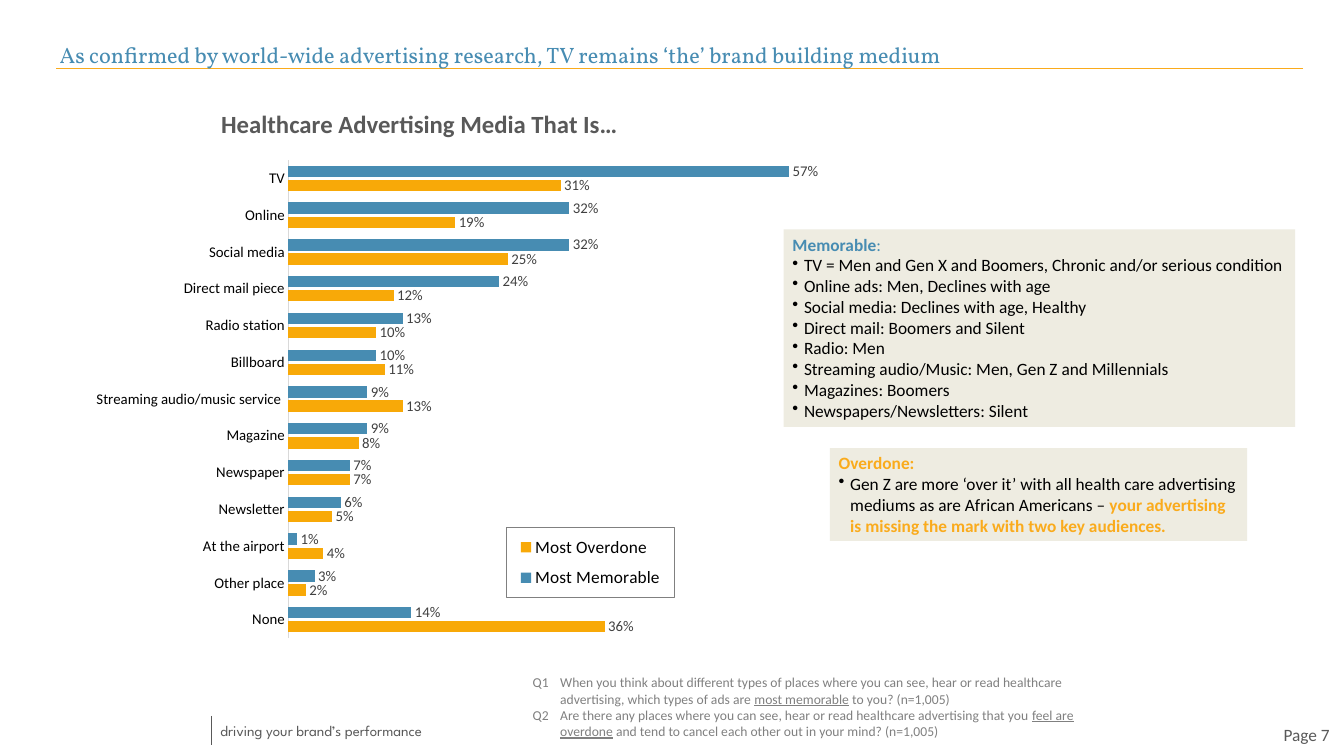
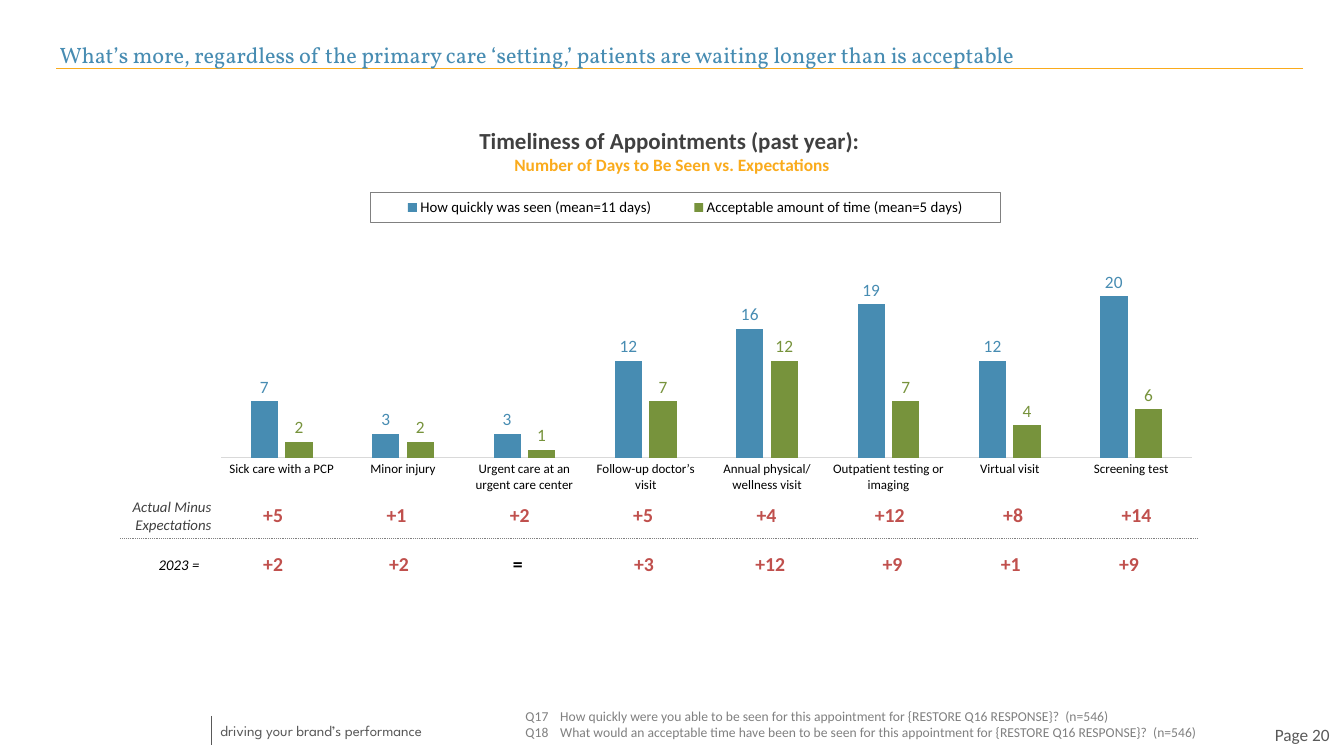
from dataclasses import dataclass
from typing import NamedTuple

from pptx import Presentation
from pptx.chart.data import CategoryChartData
from pptx.dml.color import RGBColor
from pptx.enum.chart import XL_CHART_TYPE, XL_LABEL_POSITION, XL_LEGEND_POSITION, XL_TICK_MARK
from pptx.enum.shapes import MSO_CONNECTOR, MSO_SHAPE
from pptx.enum.text import MSO_ANCHOR, PP_ALIGN
from pptx.oxml import parse_xml
from pptx.oxml.ns import nsdecls, qn
from pptx.util import Emu, Inches, Pt

LEFT, CENTER, RIGHT = PP_ALIGN.LEFT, PP_ALIGN.CENTER, PP_ALIGN.RIGHT
TOP, MIDDLE, BOTTOM = MSO_ANCHOR.TOP, MSO_ANCHOR.MIDDLE, MSO_ANCHOR.BOTTOM
BAR, COLUMN = XL_CHART_TYPE.BAR_CLUSTERED, XL_CHART_TYPE.COLUMN_CLUSTERED
LEGEND_BOTTOM, LEGEND_TOP = XL_LEGEND_POSITION.BOTTOM, XL_LEGEND_POSITION.TOP

WIDTH, HEIGHT = Inches(15.11), Inches(8.5)
COLORS = {
    "blue": "478CB2", "gold": "FAAB1C", "orange": "F8A908", "green": "77933C",
    "red": "C0504D", "beige": "EEECE1", "black": "000000", "ink": "404040",
    "slate": "595959", "gray": "808080", "axis": "D9D9D9",
}
BODY, TITLE, TAGLINE = "Calibri", "Vollkorn", "League Spartan"
STANDARD_MARGINS = (0.1, 0.05)
WIDE_MARGINS = (0.11, 0.06)


class Area(NamedTuple):
    """Left, top, width and height in percent of the slide."""
    left: float
    top: float
    width: float
    height: float

    def lengths(self) -> tuple[Emu, Emu, Emu, Emu]:
        return (across(self.left), down(self.top), across(self.width), down(self.height))


class Span(NamedTuple):
    text: str
    color: str | None = None
    size: float | None = None
    bold: bool | None = None
    underline: bool = False


@dataclass
class Para:
    spans: list[Span]
    indent: float = 0
    bullet: bool = False


@dataclass
class Series:
    name: str
    values: list[float]
    color: str
    label_color: str


@dataclass
class ChartStyle:
    """Plot and legend are left, top, width, height as shares of the chart."""
    kind: XL_CHART_TYPE
    gap: int
    overlap: int
    maximum: float
    number_format: str
    axis_size: float
    label_size: float
    legend_size: float
    legend_position: XL_LEGEND_POSITION
    plot: tuple[float, float, float, float]
    legend: tuple[float, float, float, float]
    reverse: bool = False


def across(percent: float) -> Emu:
    return Emu(round(WIDTH * percent / 100))


def down(percent: float) -> Emu:
    return Emu(round(HEIGHT * percent / 100))


def rgb(name: str) -> RGBColor:
    return RGBColor.from_string(COLORS[name])


def style_font(font, size: float, color: str, name: str = BODY) -> None:
    font.size, font.name = Pt(size), name
    font.color.rgb = rgb(color)


def write(frame, paras: list[Para], *, size: float, color: str = "black", font: str = BODY,
          align=LEFT, bold: bool = False, italic: bool = False) -> None:
    for index, para in enumerate(paras):
        paragraph = frame.add_paragraph() if index else frame.paragraphs[0]
        paragraph.alignment = align
        properties = paragraph._p.get_or_add_pPr()
        if para.indent:
            properties.set("marL", str(Inches(para.indent)))
            properties.set("indent", str(-Inches(para.indent)))
        if para.bullet:
            properties.append(parse_xml(f'<a:buChar {nsdecls("a")} char="•"/>'))
        for span in para.spans:
            run = paragraph.add_run()
            run.text = span.text
            style_font(run.font, span.size or size, span.color or color, font)
            run.font.bold = bold if span.bold is None else span.bold
            run.font.italic = italic
            run.font.underline = span.underline


def add_text(page, area: Area, paras: list[Para], *, anchor=TOP, margins=STANDARD_MARGINS,
             wrap: bool = True, fill: str | None = None, **text_format) -> None:
    if fill:
        box = page.shapes.add_shape(MSO_SHAPE.RECTANGLE, *area.lengths())
        box.shadow.inherit = False
        box.fill.solid()
        box.fill.fore_color.rgb = rgb(fill)
        box.line.fill.background()
    else:
        box = page.shapes.add_textbox(*area.lengths())
    frame = box.text_frame
    frame.word_wrap, frame.vertical_anchor = wrap, anchor
    frame.margin_left = frame.margin_right = Inches(margins[0])
    frame.margin_top = frame.margin_bottom = Inches(margins[1])
    write(frame, paras, **text_format)


def add_line(page, start: tuple[float, float], end: tuple[float, float],
             color: str, weight: float) -> None:
    line = page.shapes.add_connector(MSO_CONNECTOR.STRAIGHT, across(start[0]), down(start[1]),
                                     across(end[0]), down(end[1]))
    line.line.color.rgb, line.line.width = rgb(color), Pt(weight)
    line._element.spPr.append(parse_xml(f'<a:effectLst {nsdecls("a")}/>'))


def add_page(deck, title: str, number: int):
    """Add a blank slide with the shared title, rule and footer."""
    page = deck.slides.add_slide(deck.slide_layouts[6])
    add_line(page, (96.96, 9.06), (4.17, 9.06), "gold", 1)
    add_text(page, Area(15.75, 94.82, 19.52, 3.53), [Para([Span("driving your brand’s performance")])],
             wrap=False, size=12, color="slate", font=TAGLINE)
    add_line(page, (15.75, 94.71), (15.75, 98.59), "slate", 0.75)
    add_text(page, Area(91, 95.29, 8.67, 3.88), [Para([Span(f"Page {number}")])],
             anchor=MIDDLE, margins=WIDE_MARGINS, size=14, color="slate", align=RIGHT)
    add_text(page, Area(3.71, 4.35, 93.18, 5.29), [Para([Span(title)])],
             anchor=BOTTOM, margins=WIDE_MARGINS, size=18, color="blue", font=TITLE)
    return page


def manual_layout(shares: tuple[float, float, float, float], inner: bool = False):
    target = '<c:layoutTarget val="inner"/>' if inner else ""
    modes = "".join(f'<c:{edge}Mode val="edge"/>' for edge in "xy")
    sizes = "".join(f'<c:{name} val="{share}"/>' for name, share in zip("xywh", shares))
    return parse_xml(f'<c:layout {nsdecls("c")}><c:manualLayout>{target}{modes}{sizes}'
                     '</c:manualLayout></c:layout>')


def place_chart_parts(chart, style: ChartStyle) -> None:
    """Fix the plot and legend positions and frame the legend."""
    plot_area = chart.element.find(".//" + qn("c:plotArea"))
    for layout in plot_area.findall(qn("c:layout")):
        plot_area.remove(layout)
    plot_area.insert(0, manual_layout(style.plot, inner=True))
    legend = chart.element.find(".//" + qn("c:legend"))
    for layout in legend.findall(qn("c:layout")):
        legend.remove(layout)
    legend.find(qn("c:legendPos")).addnext(manual_layout(style.legend))
    legend.find(qn("c:txPr")).addprevious(parse_xml(
        f'<c:spPr {nsdecls("c", "a")}><a:ln w="9525"><a:solidFill>'
        f'<a:srgbClr val="{COLORS["gray"]}"/></a:solidFill></a:ln></c:spPr>'))


def add_bars(page, area: Area, categories: list[str], series_list: list[Series],
             style: ChartStyle) -> None:
    data = CategoryChartData(number_format=style.number_format)
    data.categories = categories
    for series in series_list:
        data.add_series(series.name, series.values)
    chart = page.shapes.add_chart(style.kind, *area.lengths(), data).chart
    chart.has_title = False
    style_font(chart.font, 10, "black")
    plot = chart.plots[0]
    plot.gap_width, plot.overlap, plot.vary_by_categories = style.gap, style.overlap, False

    axis = chart.category_axis
    axis.major_tick_mark = axis.minor_tick_mark = XL_TICK_MARK.NONE
    axis.reverse_order = style.reverse
    axis.format.line.color.rgb, axis.format.line.width = rgb("axis"), Pt(0.75)
    style_font(axis.tick_labels.font, style.axis_size, "black")
    values = chart.value_axis
    values.visible = values.has_major_gridlines = False
    values.minimum_scale, values.maximum_scale = 0, style.maximum

    for drawn, series in zip(plot.series, series_list):
        drawn.format.fill.solid()
        drawn.format.fill.fore_color.rgb = rgb(series.color)
        drawn.invert_if_negative = False
        labels = drawn.data_labels
        labels.show_value, labels.position = True, XL_LABEL_POSITION.OUTSIDE_END
        labels.number_format, labels.number_format_is_linked = style.number_format, False
        style_font(labels.font, style.label_size, series.label_color)

    chart.has_legend = True
    chart.legend.position, chart.legend.include_in_layout = style.legend_position, False
    style_font(chart.legend.font, style.legend_size, "black")
    place_chart_parts(chart, style)


def add_gap_row(page, area: Area, label: str, label_color: str, gaps: list[str],
                weights: list[float], dotted: bool = False) -> None:
    """Add a one-row table: an italic label, then bold differences."""
    table = page.shapes.add_table(1, len(weights), *area.lengths()).table
    table.first_row = table.horz_banding = False
    for column, weight in zip(table.columns, weights):
        column.width = across(area.width * weight / sum(weights))
    for index, text in enumerate([label, *gaps]):
        cell = table.cell(0, index)
        cell.vertical_anchor = MIDDLE
        if index == 0:
            cell.margin_left = cell.margin_right = 0
            write(cell.text_frame, [Para([Span(text)])], size=12, color=label_color,
                  align=RIGHT, italic=True)
        else:
            write(cell.text_frame, [Para([Span(text)])], size=16, bold=True, align=CENTER,
                  color="black" if text == "=" else "red")
        if dotted:
            cell._tc.get_or_add_tcPr().append(parse_xml(
                f'<a:lnB {nsdecls("a")} w="9525"><a:solidFill><a:srgbClr val="{COLORS["gray"]}"/>'
                '</a:solidFill><a:prstDash val="sysDot"/></a:lnB>'))
        cell.fill.background()


def build_media_page(deck) -> None:
    page = add_page(deck, "As confirmed by world-wide advertising research, TV remains ‘the’ "
                    "brand building medium", 7)
    categories = ["TV", "Online", "Social media", "Direct mail piece", "Radio station", "Billboard",
                  "Streaming audio/music service ", "Magazine", "Newspaper", "Newsletter",
                  "At the airport", "Other place", "None"]
    memorable = [0.57, 0.32, 0.32, 0.24, 0.13, 0.1, 0.09, 0.09, 0.07, 0.06, 0.01, 0.03, 0.14]
    overdone = [0.31, 0.19, 0.25, 0.12, 0.1, 0.11, 0.13, 0.08, 0.07, 0.05, 0.04, 0.02, 0.36]
    add_bars(page, Area(5.89, 16.82, 56.78, 67.88), categories,
             [Series("Most Memorable", memorable, "blue", "ink"),
              Series("Most Overdone", overdone, "orange", "ink")],
             ChartStyle(BAR, 100, -25, 0.6, "0%", 12, 12, 14, LEGEND_BOTTOM,
                        plot=(0.274, 0.064, 0.691, 0.932), legend=(0.56, 0.78, 0.22, 0.137),
                        reverse=True))
    add_text(page, Area(11.91, 13.76, 38.58, 5.18),
             [Para([Span("Healthcare Advertising Media That Is…")])],
             size=20, color="slate", bold=True, align=CENTER)
    add_text(page, Area(38.98, 88.59, 45.4, 9.88), [
        Para([Span("Q1\tWhen you think about different types of places where you can see, hear or "
                   "read healthcare advertising, which types of ads are "),
              Span("most memorable", underline=True), Span(" to you? (n=1,005)")], 0.31),
        Para([Span("Q2\tAre there any places where you can see, hear or read healthcare "
                   "advertising that you "), Span("feel are overdone", underline=True),
              Span(" and tend to cancel each other out in your mind? (n=1,005)")], 0.31),
    ], size=11, color="gray")
    points = ["TV = Men and Gen X and Boomers, Chronic and/or serious condition",
              "Online ads: Men, Declines with age", "Social media: Declines with age, Healthy",
              "Direct mail: Boomers and Silent", "Radio: Men",
              "Streaming audio/Music: Men, Gen Z and Millennials", "Magazines: Boomers",
              "Newspapers/Newsletters: Silent"]
    add_text(page, Area(58.31, 30.35, 38.05, 26.12),
             [Para([Span("Memorable", "blue", bold=True), Span(":", "blue")]),
              *(Para([Span(point)], 0.13, True) for point in points)], fill="beige", size=14)
    add_text(page, Area(61.75, 59.29, 31.04, 12.24), [
        Para([Span("Overdone:", "gold", bold=True)]),
        Para([Span("Gen Z are more ‘over it’ with all health care advertising mediums as are "
                   "African Americans – "),
              Span("your advertising is missing the mark with two key audiences.", "gold",
                   bold=True)], 0.13, True),
    ], fill="beige", size=14)


def build_timeliness_page(deck) -> None:
    page = add_page(deck, "What’s more, regardless of the primary care ‘setting,’ patients are "
                    "waiting longer than is acceptable", 20)
    categories = ["Sick care with a PCP", "Minor injury", "Urgent care at an urgent care center",
                  "Follow-up doctor’s visit", "Annual physical/\nwellness visit",
                  "Outpatient testing or imaging", "Virtual visit", "Screening test"]
    add_bars(page, Area(13.1, 20, 76.04, 57.53), categories,
             [Series("How quickly was seen (mean=11 days)", [7, 3, 3, 12, 16, 19, 12, 20],
                     "blue", "blue"),
              Series("Acceptable amount of time (mean=5 days)", [2, 2, 1, 7, 12, 7, 4, 6],
                     "green", "green")],
             ChartStyle(COLUMN, 219, -27, 25, "General", 10.5, 14, 12, LEGEND_TOP,
                        plot=(0.044, 0.241, 0.95, 0.464), legend=(0.19, 0.094, 0.617, 0.071)))
    add_gap_row(page, Area(9, 65.29, 80.15, 5.76), "Actual Minus Expectations", "ink",
                ["+5", "+1", "+2", "+5", "+4", "+12", "+8", "+14"],
                [1.02] + [1.39] * 8, dotted=True)
    add_text(page, Area(38.45, 93.06, 52.95, 5.53), [
        Para([Span(f"{code}\t{question} for this appointment for {{RESTORE Q16 RESPONSE}}?\u00a0 (n=546)")],
             0.39)
        for code, question in [("Q17", "How quickly were you able to be seen"),
                               ("Q18", "What would an acceptable time have been to be seen")]
    ], size=11, color="gray")
    add_text(page, Area(25.02, 16.12, 49.97, 7.65), [
        Para([Span("Timeliness of Appointments (past year): ")]),
        Para([Span("Number of Days to Be Seen vs. Expectations", "gold", 14)]),
    ], size=18.6, color="ink", bold=True, align=CENTER)
    add_gap_row(page, Area(7.35, 72.35, 81.07, 4.82), "2023 = ", "black",
                ["+2", "+2", "=", "+3", "+12", "+9", "+1", "+9"],
                [1.17, 1.58, 1.25] + [1.42] * 3 + [1.33] * 3)


def main() -> None:
    deck = Presentation()
    deck.slide_width, deck.slide_height = WIDTH, HEIGHT
    build_media_page(deck)
    build_timeliness_page(deck)
    deck.save("out.pptx")


if __name__ == "__main__":
    main()
